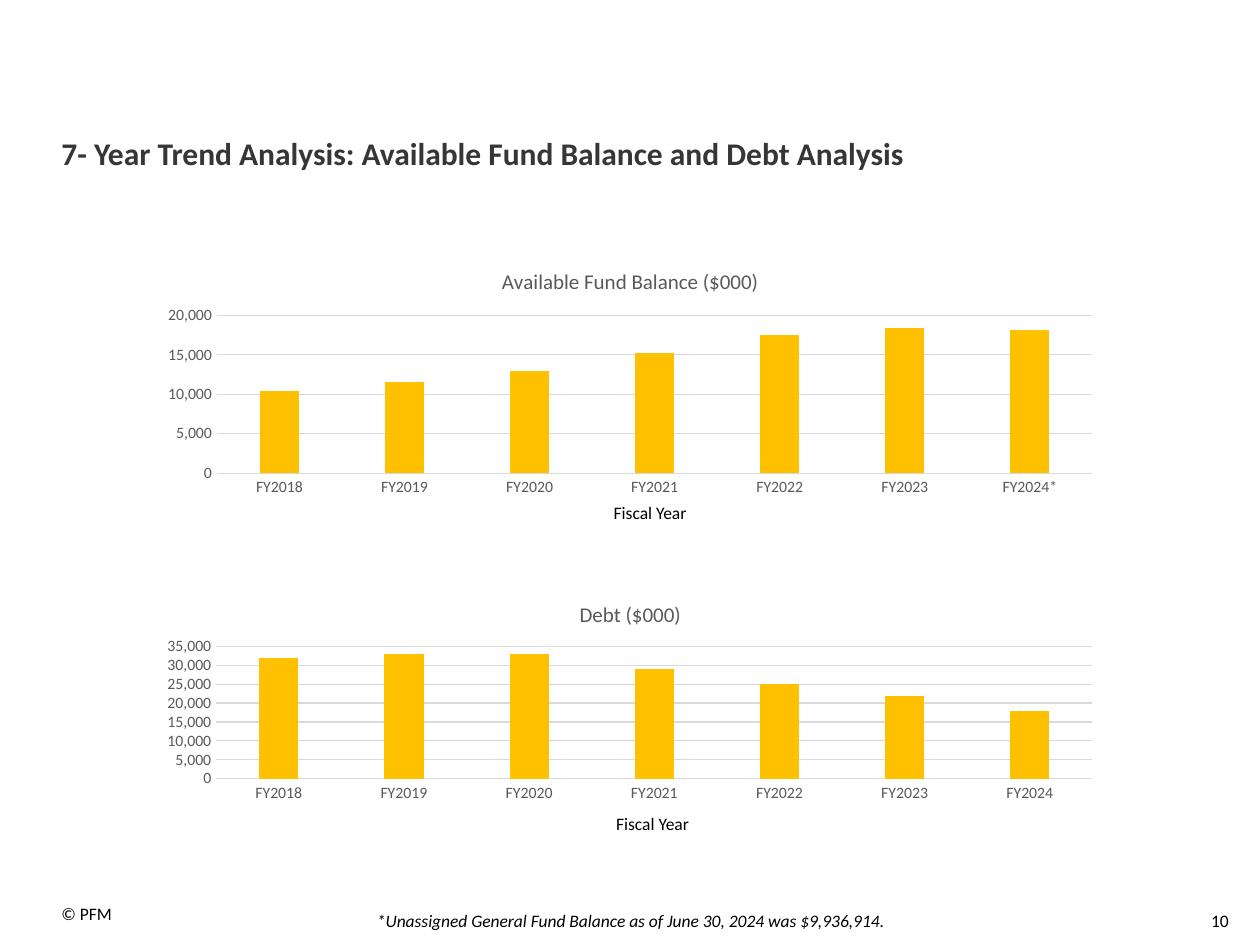
from dataclasses import dataclass

from lxml.etree import SubElement
from pptx import Presentation
from pptx.chart.data import CategoryChartData as ChartData
from pptx.dml.color import RGBColor as Color
from pptx.enum.chart import XL_CHART_TYPE as ChartType, XL_TICK_MARK as Tick
from pptx.enum.text import MSO_AUTO_SIZE as AutoSize, PP_ALIGN as Align
from pptx.oxml.ns import qn
from pptx.util import Cm, Pt


@dataclass(frozen=True)
class Theme:
    font: str = "Calibri"
    black: str = "000000"
    heading: str = "373637"
    label: str = "595959"
    rule: str = "D9D9D9"
    bar: str = "FFC000"
    title_size: int = 18
    chart_title_size: int = 12
    body_size: int = 10
    axis_size: int = 9
    line_width: float = 0.75


THEME = Theme()

YEARS = [f"FY{year}" for year in range(2018, 2025)]
CHART_LEFT, CHART_WIDTH = 3, 19.41
CHARTS = [
    dict(title="Available Fund Balance ($000)", top=5.08, height=5.03, peak=20000,
         years=YEARS[:-1] + [YEARS[-1] + "*"],
         values=[10400, 11600, 12900, 15200, 17500, 18400, 18200]),
    dict(title="Debt ($000)", top=11.79, height=4.6, peak=35000, years=YEARS,
         values=[32000, 33000, 33000, 29000, 25000, 22000, 18000],
         plot=dict(x=0.07, y=0.27, w=0.91, h=0.58)),
]

TEXTS = [
    ("7- Year Trend Analysis: Available Fund Balance and Debt Analysis",
     dict(at=(1.24, 2.79, 21.89, 0.71), size=THEME.title_size, color=THEME.heading,
          bold=True, spacing=0.9)),
    ("Fiscal Year", dict(at=(3.4, 10.13, CHART_WIDTH, 0.56), align=Align.CENTER)),
    ("Fiscal Year", dict(at=(3.45, 16.38, CHART_WIDTH, 0.56), align=Align.CENTER)),
    ("*Unassigned General Fund Balance as of June 30, 2024 was $9,936,914.",
     dict(at=(0.3, 18.34, 24.82, 0.71), align=Align.CENTER, italic=True)),
    ("© PFM", dict(at=(1.24, 18.21, 3.53, 0.69), wrap=False)),
    ("10", dict(at=(17.4, 18.21, 7.62, 1.02), align=Align.RIGHT, inset=(0.25, 0.13))),
]


def style_font(font, size, color, bold=False, italic=False):
    font.name = THEME.font
    font.size = Pt(size)
    font.color.rgb = Color.from_string(color)
    font.bold = bold
    font.italic = italic


def add_text(page, text, at, size=THEME.body_size, color=THEME.black, bold=False,
             italic=False, align=Align.LEFT, spacing=None, inset=(0, 0), wrap=True):
    frame = page.shapes.add_textbox(*map(Cm, at)).text_frame
    frame.word_wrap = wrap
    frame.auto_size = AutoSize.NONE
    frame.margin_left = frame.margin_right = Cm(inset[0])
    frame.margin_top = frame.margin_bottom = Cm(inset[1])
    para = frame.paragraphs[0]
    para.alignment = align
    para.line_spacing = spacing
    span = para.add_run()
    span.text = text
    style_font(span.font, size, color, bold, italic)


def style_rule(line):
    line.color.rgb = Color.from_string(THEME.rule)
    line.width = Pt(THEME.line_width)


def place_plot(chart, plot):
    area = chart._chartSpace.find(".//" + qn("c:plotArea"))
    for old in area.findall(qn("c:layout")):
        area.remove(old)
    layout = SubElement(area, qn("c:layout"))
    area.insert(0, layout)
    manual = SubElement(layout, qn("c:manualLayout"))
    settings = {"layoutTarget": "inner", "xMode": "edge", "yMode": "edge", **plot}
    for name, value in settings.items():
        SubElement(manual, qn("c:" + name)).set("val", str(value))


def add_column_chart(page, title, top, height, peak, years, values, plot=None):
    data = ChartData(number_format="#,##0")
    data.categories = years
    data.add_series(title, values)
    chart = page.shapes.add_chart(
        ChartType.COLUMN_CLUSTERED, Cm(CHART_LEFT), Cm(top), Cm(CHART_WIDTH), Cm(height), data
    ).chart
    style_font(chart.font, THEME.body_size, THEME.black)
    chart.has_legend = False
    chart.has_title = True
    chart.chart_title.include_in_layout = False
    para = chart.chart_title.text_frame.paragraphs[0]
    span = para.add_run()
    span.text = title
    style_font(span.font, THEME.chart_title_size, THEME.label)

    columns = chart.plots[0]
    columns.gap_width = 219
    columns.overlap = -27
    columns.vary_by_categories = False
    fill = columns.series[0].format.fill
    fill.solid()
    fill.fore_color.rgb = Color.from_string(THEME.bar)

    for axis in (chart.category_axis, chart.value_axis):
        axis.major_tick_mark = axis.minor_tick_mark = Tick.NONE
        style_font(axis.tick_labels.font, THEME.axis_size, THEME.label)
    style_rule(chart.category_axis.format.line)
    scale = chart.value_axis
    scale.minimum_scale, scale.maximum_scale, scale.major_unit = 0, peak, 5000
    scale.tick_labels.number_format = "#,##0"
    scale.tick_labels.number_format_is_linked = False
    scale.format.line.fill.background()
    scale.has_major_gridlines = True
    style_rule(scale.major_gridlines.format.line)
    if plot:
        place_plot(chart, plot)


def main():
    deck = Presentation()
    deck.slide_width, deck.slide_height = Cm(25.4), Cm(19.05)
    page = deck.slides.add_slide(deck.slide_layouts[6])
    for chart in CHARTS:
        add_column_chart(page, **chart)
    for text, options in TEXTS:
        add_text(page, text, **options)
    deck.save("out.pptx")


if __name__ == "__main__":
    main()
